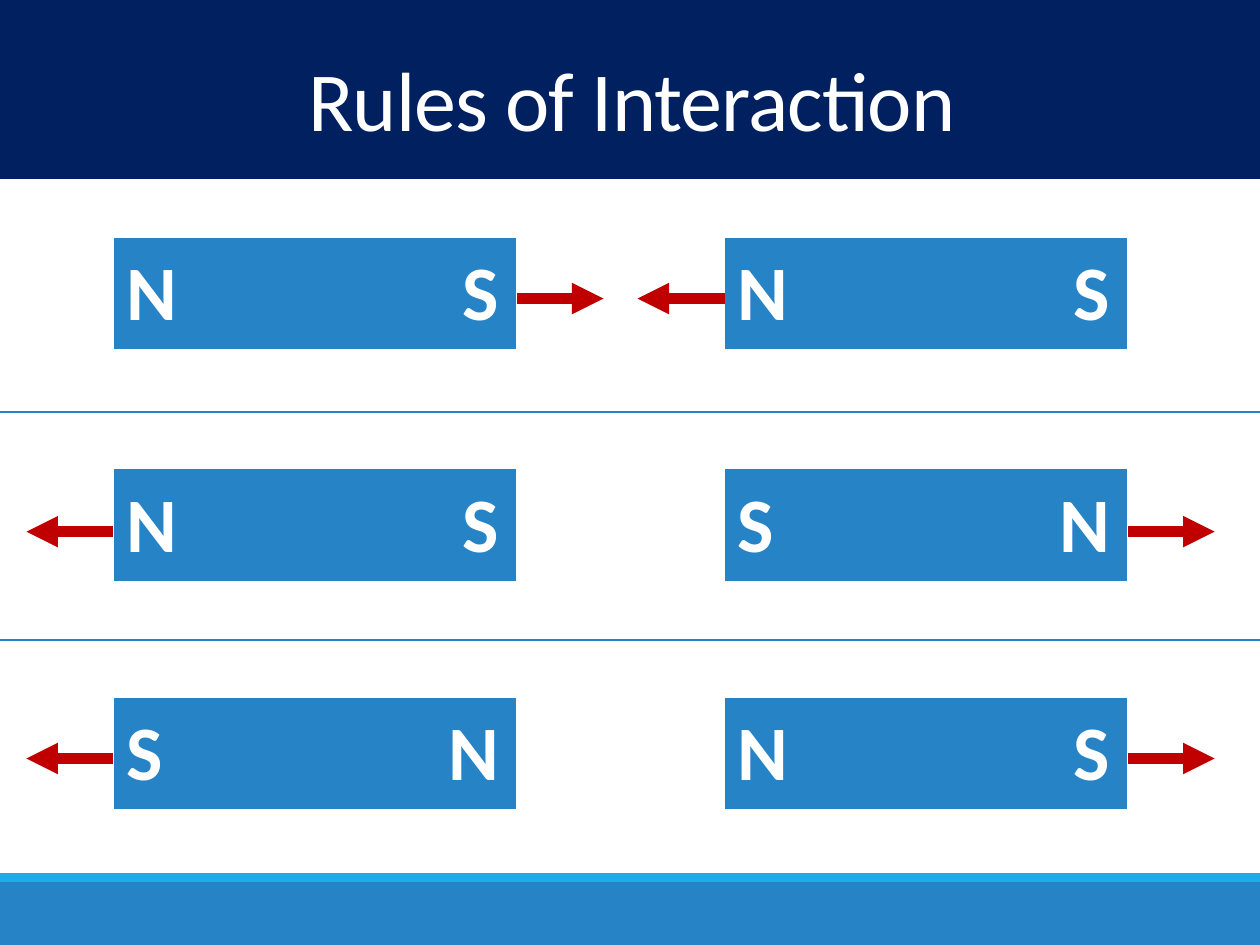
from dataclasses import dataclass

from lxml import etree
from pptx import Presentation
from pptx.dml.color import RGBColor
from pptx.enum.shapes import MSO_CONNECTOR, MSO_SHAPE
from pptx.enum.text import MSO_ANCHOR, PP_ALIGN
from pptx.oxml import parse_xml
from pptx.oxml.ns import nsdecls, qn
from pptx.util import Inches, Pt

RECT = MSO_SHAPE.RECTANGLE
STRAIGHT = MSO_CONNECTOR.STRAIGHT
MIDDLE = MSO_ANCHOR.MIDDLE
CENTER, LEFT = PP_ALIGN.CENTER, PP_ALIGN.LEFT


@dataclass(frozen=True)
class Theme:
    navy: str = "002060"
    blue: str = "2683C6"
    cyan: str = "1CADE4"
    red: str = "C00000"
    white: str = "FFFFFF"
    font: str = "Calibri"
    title_size: int = 48
    pole_size: int = 44


theme = Theme()


def add_line(x1, x2, y, color, width, arrow=False):
    """Draw a horizontal line, with an optional arrowhead at x2."""
    line = s.shapes.add_connector(STRAIGHT, Inches(x1), Inches(y), Inches(x2), Inches(y))
    line.line.color.rgb = RGBColor.from_string(color)
    line.line.width = Pt(width)
    if arrow:
        etree.SubElement(line.line._get_or_add_ln(), qn("a:tailEnd"), type="triangle")
    etree.SubElement(line._element.spPr, qn("a:effectLst"))


def style_font(p, size):
    p.font.name = theme.font
    p.font.size = Pt(size)
    p.font.color.rgb = RGBColor.from_string(theme.white)


prs = Presentation()
prs.slide_width, prs.slide_height = Inches(10), Inches(7.5)
s = prs.slides.add_slide(prs.slide_layouts[5])

# Header and footer bands
for top, height, color in [(7, 0.5, theme.blue), (6.93, 0.07, theme.cyan), (0, 1.42, theme.navy)]:
    band = s.shapes.add_shape(RECT, 0, Inches(top), Inches(10), Inches(height))
    band.shadow.inherit = False
    band.fill.solid()
    band.fill.fore_color.rgb = RGBColor.from_string(color)
    band.line.fill.background()

# Title, in front of the header band
title = s.shapes.title
title.left, title.top = Inches(0.03), Inches(0.42)
title.width, title.height = Inches(9.97), Inches(0.84)
s.shapes._spTree.append(title._element)
tf = title.text_frame
tf.text = "Rules of Interaction"
tf.vertical_anchor = MIDDLE
p = tf.paragraphs[0]
p.alignment = CENTER
p.line_spacing = 0.85
style_font(p, theme.title_size)
p.runs[0].font._element.set("spc", "-50")

# Magnets: (row top, poles of the left magnet, poles of the right magnet)
magnet_lefts = (0.9, 5.75)
magnet_w, magnet_h = 3.2, 0.91
pole_tab = 2.96
rows = [(1.88, "NS", "NS"), (3.72, "NS", "SN"), (5.53, "SN", "NS")]
borders = [("lnL", 1), ("lnR", 1), ("lnT", 1), ("lnB", 3)]

for top, *magnets in rows:
    for left, poles in zip(magnet_lefts, magnets):
        frame = s.shapes.add_table(1, 1, Inches(left), Inches(top), Inches(magnet_w), Inches(magnet_h))
        cell = frame.table.cell(0, 0)
        cell.vertical_anchor = MIDDLE
        cell.fill.solid()
        cell.fill.fore_color.rgb = RGBColor.from_string(theme.blue)
        p = cell.text_frame.paragraphs[0]
        p.text = "\t".join(poles)
        p.alignment = LEFT
        style_font(p, theme.pole_size)
        p.font.bold = True
        tabs = etree.Element(qn("a:tabLst"))
        etree.SubElement(tabs, qn("a:tab"), pos=str(Inches(pole_tab)), algn="r")
        p._p.get_or_add_pPr().insert(0, tabs)
        tc_pr = cell._tc.get_or_add_tcPr()
        for i, (side, width) in enumerate(borders):
            tc_pr.insert(i, parse_xml(
                f'<a:{side} {nsdecls("a")} w="{Pt(width)}"><a:solidFill>'
                f'<a:srgbClr val="{theme.white}"/></a:solidFill></a:{side}>'))

# Row dividers
for y in (3.27, 5.08):
    add_line(0, 10, y, theme.blue, 1)

# Force arrows: opposite facing poles attract, like poles repel
arrow_len = 0.69
left_magnet, right_magnet = magnet_lefts
for (top, left_poles, right_poles), y in zip(rows, (2.37, 4.22, 6.02)):
    if left_poles[1] != right_poles[0]:
        starts = [(left_magnet + magnet_w, 1), (right_magnet, -1)]
    else:
        starts = [(left_magnet, -1), (right_magnet + magnet_w, 1)]
    for x, direction in starts:
        add_line(x, x + direction * arrow_len, y, theme.red, 6, arrow=True)

prs.save("out.pptx")
